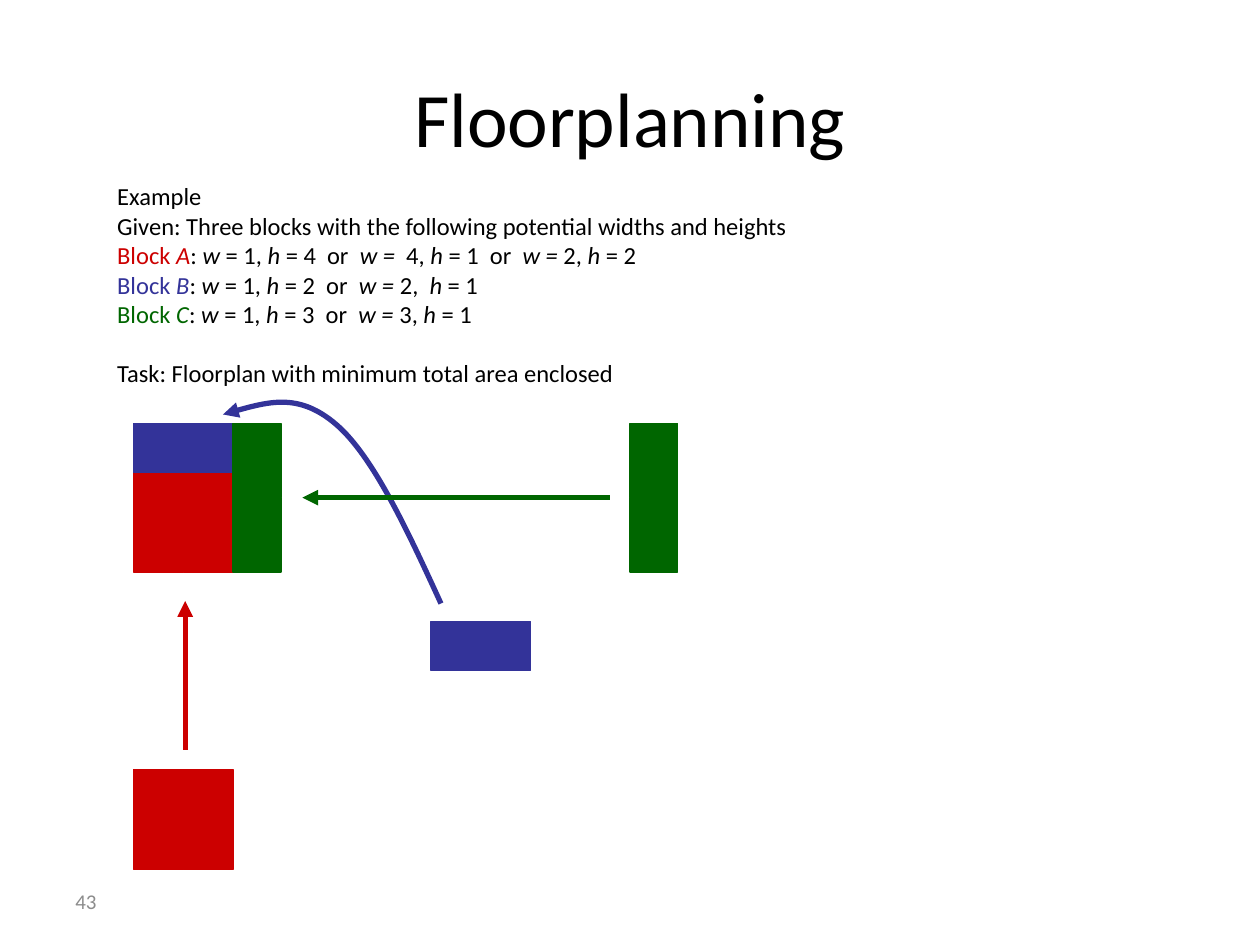
from dataclasses import dataclass

from lxml import etree
from pptx import Presentation
from pptx.dml.color import RGBColor
from pptx.enum.shapes import MSO_CONNECTOR, MSO_SHAPE
from pptx.enum.text import MSO_ANCHOR, PP_ALIGN
from pptx.oxml.ns import qn
from pptx.util import Inches, Pt

RECTANGLE = MSO_SHAPE.RECTANGLE
STRAIGHT = MSO_CONNECTOR.STRAIGHT
MIDDLE = MSO_ANCHOR.MIDDLE
LEFT, CENTER = PP_ALIGN.LEFT, PP_ALIGN.CENTER


@dataclass(frozen=True)
class Theme:
    font: str = "Calibri"
    black: RGBColor = RGBColor(0, 0, 0)
    grey: RGBColor = RGBColor(0x8C, 0x8C, 0x8C)
    block_a: RGBColor = RGBColor(0xCC, 0, 0)
    block_b: RGBColor = RGBColor(0x33, 0x33, 0x99)
    block_c: RGBColor = RGBColor(0, 0x66, 0)
    title: Pt = Pt(44)
    body: Pt = Pt(14)
    number: Pt = Pt(12)
    outline: Pt = Pt(0.75)
    arrow: Pt = Pt(3)


THEME = Theme()

# Each line: coloured lead, its colour, remaining text; *...* is italic
EXAMPLE = [
    ("", None, "Example"),
    ("", None, "Given: Three blocks with the following potential widths and heights"),
    ("Block *A*", THEME.block_a, ": *w *= 1, *h *= 4  or  *w = * 4, *h *= 1  or  *w =* 2, *h *= 2"),
    ("Block *B*", THEME.block_b, ": *w *= 1, *h *= 2  or  *w =* 2,  *h *= 1"),
    ("Block *C*", THEME.block_c, ": *w* = 1, *h *= 3  or  *w =* 3, *h *= 1"),
    ("", None, "Task: Floorplan with minimum total area enclosed"),
]


def set_font(paragraph, size, color):
    font = paragraph.font
    font.name, font.size = THEME.font, size
    font.color.rgb = color


def add_runs(paragraph, marked_text, color=None):
    for i, piece in enumerate(marked_text.split("*")):
        if piece:
            run = paragraph.add_run()
            run.text = piece
            if i % 2:
                run.font.italic = True
            if color is not None:
                run.font.color.rgb = color


def add_label(slide, box, text, size, color, align):
    frame = slide.shapes.add_textbox(*map(Inches, box)).text_frame
    frame.word_wrap = True
    frame.vertical_anchor = MIDDLE
    label = frame.paragraphs[0]
    label.text = text
    label.alignment = align
    set_font(label, size, color)


def add_example(slide, box):
    frame = slide.shapes.add_textbox(*map(Inches, box)).text_frame
    frame.word_wrap = False
    frame.margin_left, frame.margin_bottom = Inches(0.21), Inches(0.07)
    for i, (lead, color, rest) in enumerate(EXAMPLE):
        line = frame.add_paragraph() if i else frame.paragraphs[0]
        add_runs(line, lead, color)
        add_runs(line, rest)
        set_font(line, THEME.body, THEME.black)
    line.space_before = Pt(17)  # sets the task apart


def add_block(shapes, box, color, columns=1, rows=1):
    """A block made of equal cells, grouped when there are several."""
    left, top, width, height = box
    cell_w, cell_h = width / columns, height / rows
    if columns * rows > 1:
        shapes = shapes.add_group_shape().shapes
    for i in range(columns * rows):
        row, column = divmod(i, columns)
        cell = shapes.add_shape(
            RECTANGLE, Inches(left + column * cell_w), Inches(top + row * cell_h),
            Inches(cell_w), Inches(cell_h))
        cell.shadow.inherit = False
        cell.fill.solid()
        cell.fill.fore_color.rgb = color
        cell.line.color.rgb = color
        cell.line.width = THEME.outline


def style_arrow(arrow, color):
    arrow.line.color.rgb = color
    arrow.line.width = THEME.arrow
    etree.SubElement(arrow.line._get_or_add_ln(), qn("a:tailEnd"), type="triangle")


def add_straight_arrow(slide, start, end, color):
    arrow = slide.shapes.add_connector(STRAIGHT, *map(Inches, start + end))
    style_arrow(arrow, color)
    etree.SubElement(arrow._element.spPr, qn("a:effectLst"))


def add_curved_arrow(slide, points, color):
    """A start point followed by three points for each Bezier segment."""
    start, *rest = [(Inches(x), Inches(y)) for x, y in points]
    builder = slide.shapes.build_freeform(*start)
    builder.add_line_segments(rest, close=False)
    arrow = builder.convert_to_shape()
    arrow.shadow.inherit = False
    arrow.fill.background()
    style_arrow(arrow, color)
    # Turn each three straight segments into one cubic curve
    outline = arrow._element.spPr.find(".//" + qn("a:path"))
    segments = outline.findall(qn("a:lnTo"))
    for i in range(0, len(segments), 3):
        curve = etree.SubElement(outline, qn("a:cubicBezTo"))
        for segment in segments[i:i + 3]:
            curve.append(segment[0])
            outline.remove(segment)


def add_floorplan(slide, box):
    left, top, width, height = box
    long, short = 0.79, 0.39
    c_width, c_height = 0.38, 1.18
    c_left = left + 3.94
    a_size = (long, long)
    b_size = (long, short)
    c_size = (c_width, c_height)
    shapes = slide.shapes

    # Loose blocks
    add_block(shapes, (left + 2.36, top + 1.57, *b_size), THEME.block_b)
    add_block(shapes, (left, top + height - long, *a_size), THEME.block_a, columns=2)
    add_block(shapes, (c_left, top, *c_size), THEME.block_c, rows=2)

    # Assembled plan
    add_block(shapes, (left, top + short, *a_size), THEME.block_a, columns=2)
    add_block(shapes, (left, top, *b_size), THEME.block_b)
    add_block(shapes, (left + long, top, *c_size), THEME.block_c, rows=2)

    # Moves into the plan
    a_middle, c_middle = left + 0.41, top + c_height / 2
    add_straight_arrow(slide, (a_middle, top + 2.59), (a_middle, top + 1.41), THEME.block_a)
    bend = [(2.44, 1.43), (2.17, 0.84), (1.9, 0.26), (1.61, 0.01),
            (1.32, -0.24), (1.01, -0.16), (0.71, -0.07)]
    add_curved_arrow(slide, [(left + x, top + y) for x, y in bend], THEME.block_b)
    add_straight_arrow(slide, (c_left - 0.16, c_middle), (left + 1.34, c_middle), THEME.block_c)


def main():
    deck = Presentation()
    deck.slide_width, deck.slide_height = Inches(10), Inches(7.5)
    slide = deck.slides.add_slide(deck.slide_layouts[6])
    add_label(slide, (0.5, 6.95, 2.33, 0.4), "43", THEME.number, THEME.grey, LEFT)
    add_label(slide, (0.5, 0.3, 9, 1.25), "Floorplanning", THEME.title, THEME.black, CENTER)
    add_floorplan(slide, (1.06, 3.36, 4.32, 3.54))
    add_example(slide, (0.72, 1.39, 6.06, 1.75))
    deck.save("out.pptx")


if __name__ == "__main__":
    main()
